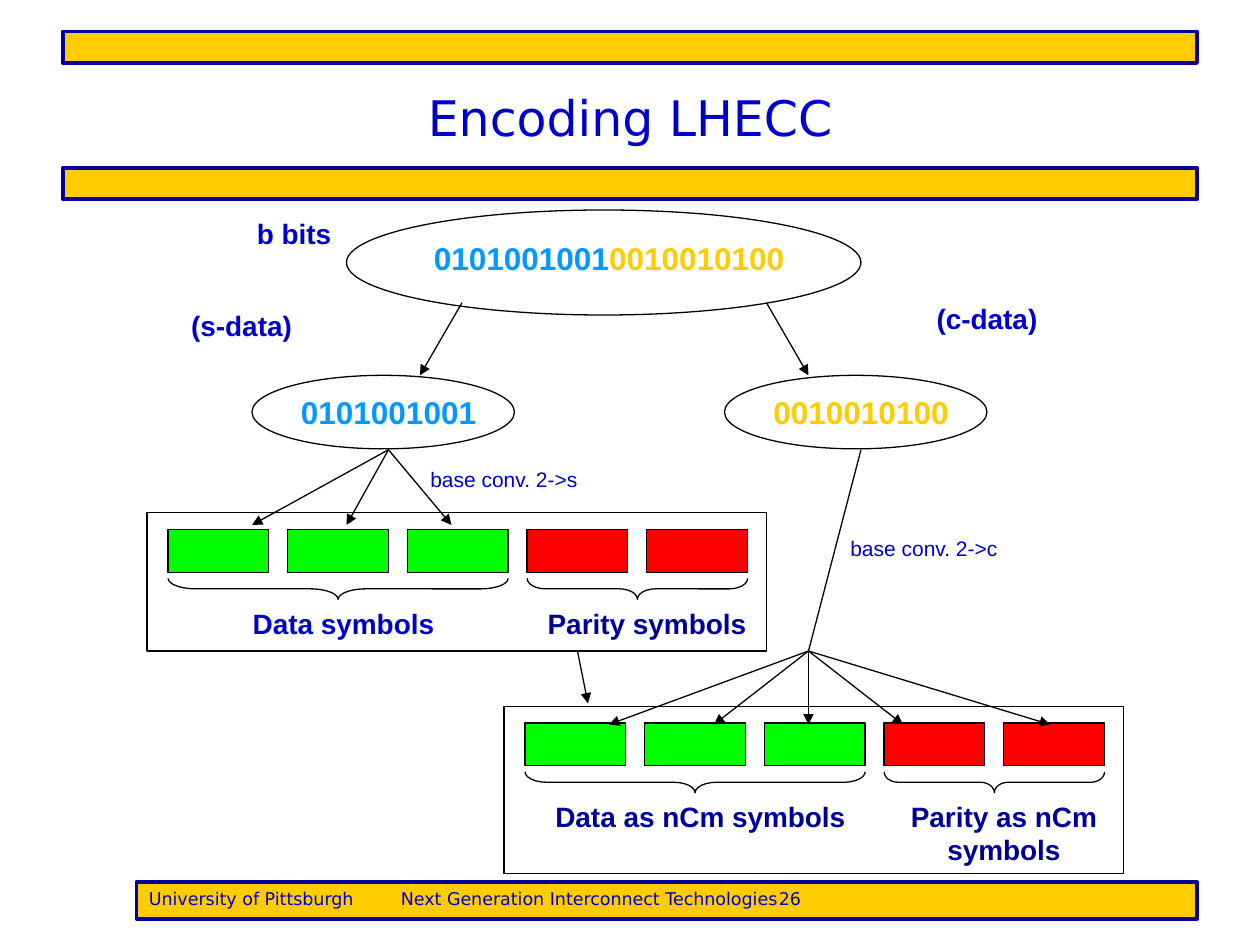
from lxml import etree
from pptx import Presentation
from pptx.dml.color import RGBColor
from pptx.enum import shapes, text
from pptx.oxml.ns import qn
from pptx.util import Pt

BLUE, NAVY, GOLD, SKY = "0000CC", "000099", "FFCC00", "0099FF"
GREEN, RED, BLACK = "00FF00", "FF0000", "000000"
KIND = shapes.MSO_SHAPE


def color(value):
    return RGBColor.from_string(value)


def add_outline(kind, frame, fill=None, line=BLACK, width=0.75):
    shape = page.shapes.add_shape(kind, *map(Pt, frame))
    shape.shadow.inherit = False
    if fill:
        shape.fill.solid()
        shape.fill.fore_color.rgb = color(fill)
    else:
        shape.fill.background()
    shape.line.color.rgb = color(line)
    shape.line.width = Pt(width)
    return shape


deck = Presentation()
deck.slide_width, deck.slide_height = Pt(720), Pt(540)
page = deck.slides.add_slide(deck.slide_layouts[6])

for top in (95.75, 18):
    add_outline(KIND.RECTANGLE, (36, top, 648, 18), GOLD, NAVY, 2.25)

footer = add_outline(KIND.RECTANGLE, (78, 504, 606, 21), GOLD, NAVY, 2.25)
footer.text_frame.text = "University of Pittsburgh\tNext Generation Interconnect Technologies\t26"
footer.text_frame.vertical_anchor = text.MSO_ANCHOR.TOP
footer_line = footer.text_frame.paragraphs[0]
footer_line.alignment = text.PP_ALIGN.LEFT
footer_font = footer_line.runs[0].font
footer_font.name, footer_font.size = "DejaVu Sans", Pt(10)
footer_font.color.rgb = color(BLUE)

for ellipse in ((198, 120, 294, 60), (144, 214.5, 150, 42), (414, 214.5, 150, 42)):
    add_outline(KIND.OVAL, ellipse)

labels = [
    ((36, 21.6, 648, 90), 28, False, "DejaVu Sans", [("Encoding LHECC", BLUE)]),
    ((228, 133, 240, 29), 18, True, "Arial", [("0101001001", SKY), ("0010010100", GOLD)]),
    ((102, 221, 240, 29), 18, True, "Arial", [("0101001001", SKY)]),
    ((372, 221, 240, 29), 18, True, "Arial", [("0010010100", GOLD)]),
    ((126, 120, 84, 26.6), 16, True, "Arial", [("b bits", BLUE)]),
    ((90, 173, 96, 26.6), 16, True, "Arial", [("(s-data)", BLUE)]),
    ((516, 169, 96, 26.6), 16, True, "Arial", [("(c-data)", BLUE)]),
    ((216, 263, 144, 21.6), 12, False, "Arial", [("base conv. 2->s", BLUE)]),
    ((456, 302.5, 144, 21.6), 12, False, "Arial", [("base conv. 2->c", BLUE)]),
]

codewords = [
    (84, 293, 79, 26.6, ("Data symbols", BLUE, 1.338), ("Parity symbols", NAVY, 0.868)),
    (288, 403.5, 95.5, 45.4, ("Data as nCm symbols", NAVY, 1.028), ("Parity as nCm symbols", NAVY, 0.667)),
]
for left, top, height, parity_height, data, parity in codewords:
    add_outline(KIND.RECTANGLE, (left, top, 354, height))
    first, row = left + 12, top + 9.6
    for index, fill in enumerate([GREEN] * 3 + [RED] * 2):
        add_outline(KIND.RECTANGLE, (first + 68.4 * index, row, 57.6, 24.5), fill)
    for start, span, (_, _, curve) in ((first, 194.4, data), (first + 205.2, 126, parity)):
        brace = add_outline(KIND.RIGHT_BRACE, (start + span / 2 - 6, row + 33.9 - span / 2, 12, span))
        brace.rotation = 90
        brace.adjustments[0] = curve
    labels.append(((first + 5.5, row + 40.2, 189.5, 26.6), 16, True, "Arial", [data[:2]]))
    labels.append(((first + 205.2, row + 40.2, 137, parity_height), 16, True, "Arial", [parity[:2]]))

for frame, size, bold, font_name, spans in labels:
    box = page.shapes.add_textbox(*map(Pt, frame))
    box.text_frame.word_wrap = True
    box.text_frame.vertical_anchor = text.MSO_ANCHOR.MIDDLE if size == 28 else text.MSO_ANCHOR.TOP
    para = box.text_frame.paragraphs[0]
    para.alignment = text.PP_ALIGN.CENTER
    for words, tint in spans:
        span = para.add_run()
        span.text = words
        span.font.name, span.font.size, span.font.bold = font_name, Pt(size), bold
        span.font.color.rgb = color(tint)

split, spread = (222, 257), (462, 372)
lines = [
    ((264, 173), (240, 214.5), True),
    ((438, 173), (462, 214.5), True),
    ((330, 372), (336, 402), True),
    ((492, 257), spread, False),
]
lines += [(split, (x, 300), True) for x in (144, 198, 258)]
lines += [(spread, (x, 414), True) for x in (348, 408, 462, 516, 600)]
for start, end, arrow in lines:
    line = page.shapes.add_connector(shapes.MSO_CONNECTOR.STRAIGHT, *map(Pt, start + end))
    line.line.color.rgb = color(BLACK)
    line.line.width = Pt(0.75)
    if arrow:
        etree.SubElement(line.line._get_or_add_ln(), qn("a:tailEnd"), type="triangle")
    etree.SubElement(line._element.spPr, qn("a:effectLst"))

deck.save("out.pptx")
